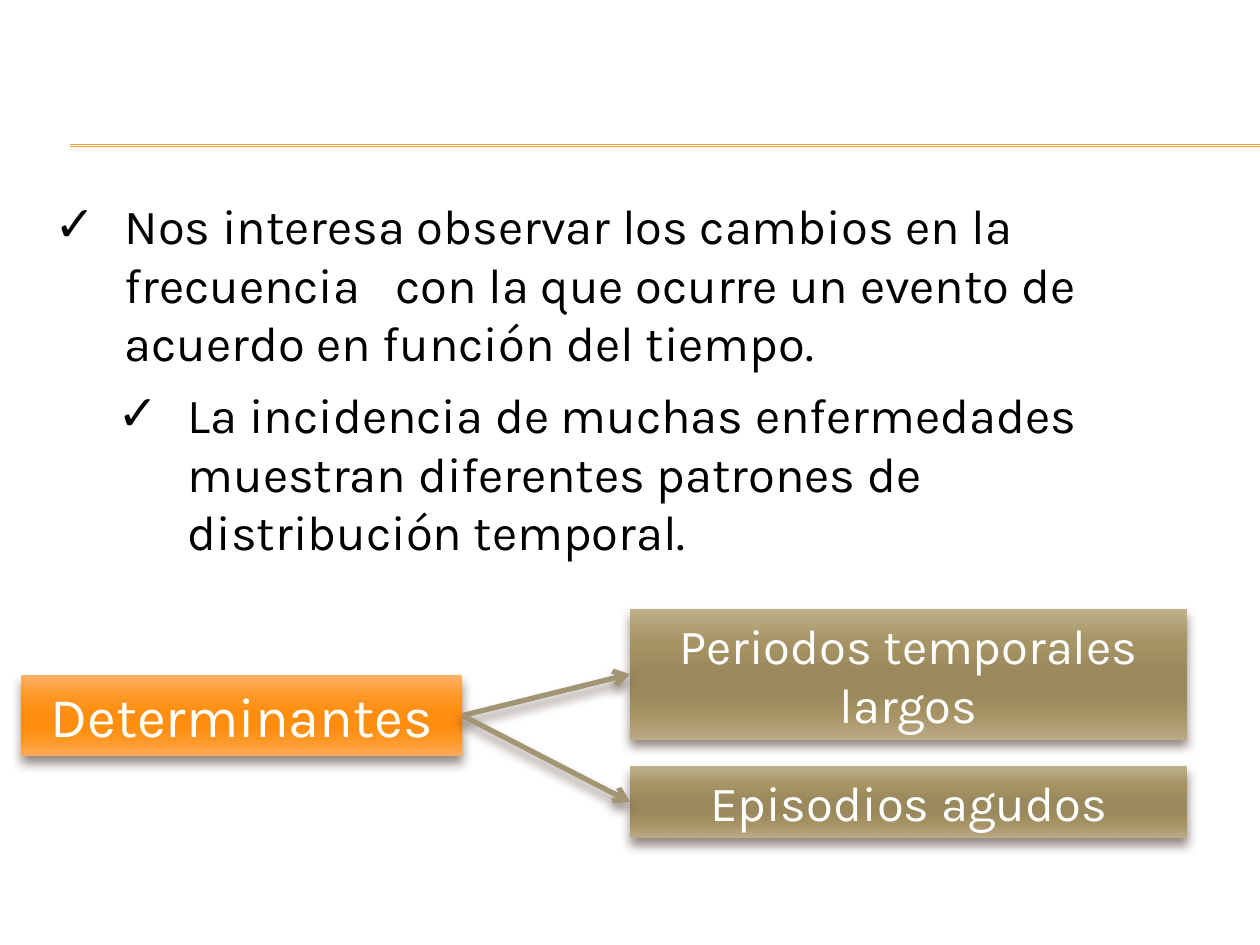
from lxml import etree
from pptx import Presentation
from pptx import util as u
from pptx.dml.color import RGBColor
from pptx.enum import shapes, text
from pptx.oxml import ns

FONT = "Karla"
COLORS = {"rule": "F0A22E", "ink": "000000", "label": "FFFFFF",
          "arrow": "A19574", "shadow": "4E3B30"}
STOPS = (0, 25, 50, 65, 80, 100)
GRADIENTS = {
    "orange": ("FFB16A", "FF9826", "FF8D0F", "FF8D0F", "FF9724", "FFAA5C"),
    "olive": ("C0B18C", "A69465", "9A895C", "9A895C", "A59364", "BAAA85"),
}
RULES = (2.92, 2.95)
POINTS = [
    ("Nos interesa observar los cambios en la frecuencia   con la que ocurre "
     "un evento de acuerdo en función del tiempo.", (0.84, 3.81, 23.29, 3.84)),
    ("La incidencia de muchas enfermedades muestran diferentes patrones de "
     "distribución temporal.", (2.11, 7.62, 22.23, 3.84)),
]
CAUSE = ("Determinantes", (0.43, 13.61, 8.89, 1.63), "orange", 32)
PATTERNS = [
    ("Periodos temporales largos", (12.7, 12.27, 11.23, 2.64), "olive", 28),
    ("Episodios agudos", (12.7, 15.44, 11.23, 1.45), "olive", 28),
]


def add(parent, tag, **attributes):
    return etree.SubElement(parent, ns.qn(tag), attributes)


def add_effects(item, shadowed):
    effects = add(item._element.spPr, "a:effectLst")
    if shadowed:
        shadow = add(effects, "a:outerShdw", blurRad=str(u.Pt(6)), dist=str(u.Pt(4)),
                     dir="5400000", rotWithShape="0")
        color = add(shadow, "a:srgbClr", val=COLORS["shadow"])
        add(color, "a:alpha", val="60000")


def format_text(frame, wording, size, color):
    frame.text = wording
    frame.word_wrap = True
    frame.auto_size = text.MSO_AUTO_SIZE.NONE
    font = frame.paragraphs[0].runs[0].font
    font.name, font.size = FONT, u.Pt(size)
    font.color.rgb = RGBColor.from_string(COLORS[color])
    return frame.paragraphs[0]


def fill_point(body, wording, place):
    body.left, body.top, body.width, body.height = map(u.Cm, place)
    body.text_frame.vertical_anchor = text.MSO_ANCHOR.TOP
    paragraph = format_text(body.text_frame, wording, 28, "ink")
    paragraph.space_before = u.Pt(0)
    properties = paragraph._p.get_or_add_pPr()
    properties.set("marL", str(u.Cm(1.42)))
    properties.set("indent", str(-u.Cm(1.42)))
    add(properties, "a:buChar", char="✓")


def add_box(slide, wording, place, gradient, size):
    box = slide.shapes.add_shape(shapes.MSO_SHAPE.RECTANGLE, *map(u.Cm, place))
    box.fill.gradient()
    box.fill.gradient_angle = 270
    stops = box._element.spPr.find(".//" + ns.qn("a:gsLst"))
    for stop in list(stops):
        stops.remove(stop)
    for position, color in zip(STOPS, GRADIENTS[gradient]):
        add(add(stops, "a:gs", pos=str(position * 1000)), "a:srgbClr", val=color)
    box.line.fill.background()
    add_effects(box, True)
    paragraph = format_text(box.text_frame, wording, size, "label")
    paragraph.alignment = text.PP_ALIGN.CENTER
    return box


def add_line(slide, start, end, color, width):
    line = slide.shapes.add_connector(
        shapes.MSO_CONNECTOR.STRAIGHT, *map(u.Cm, start + end))
    line.line.color.rgb = RGBColor.from_string(COLORS[color])
    line.line.width = u.Pt(width)
    return line


def add_arrow(slide, cause, pattern):
    arrow = add_line(slide, (0, 0), (1, 1), "arrow", 3)
    arrow.begin_connect(cause, 3)
    arrow.end_connect(pattern, 1)
    add(arrow._element.spPr.find(ns.qn("a:ln")), "a:tailEnd", type="arrow")
    add_effects(arrow, True)


def main():
    """Build the slide on temporal patterns of disease and save it."""
    deck = Presentation()
    deck.slide_width, deck.slide_height = u.Cm(25.4), u.Cm(19.05)
    slide = deck.slides.add_slide(deck.slide_layouts[3])
    title = slide.shapes.title._element
    title.getparent().remove(title)
    for index, (wording, place) in enumerate(POINTS, 1):
        fill_point(slide.placeholders[index], wording, place)
    for height in RULES:
        add_effects(add_line(slide, (1.42, height), (25.4, height), "rule", 0.75), False)
    cause = add_box(slide, *CAUSE)
    patterns = [add_box(slide, *pattern) for pattern in PATTERNS]
    for pattern in patterns:
        add_arrow(slide, cause, pattern)
    deck.save("out.pptx")


if __name__ == "__main__":
    main()
